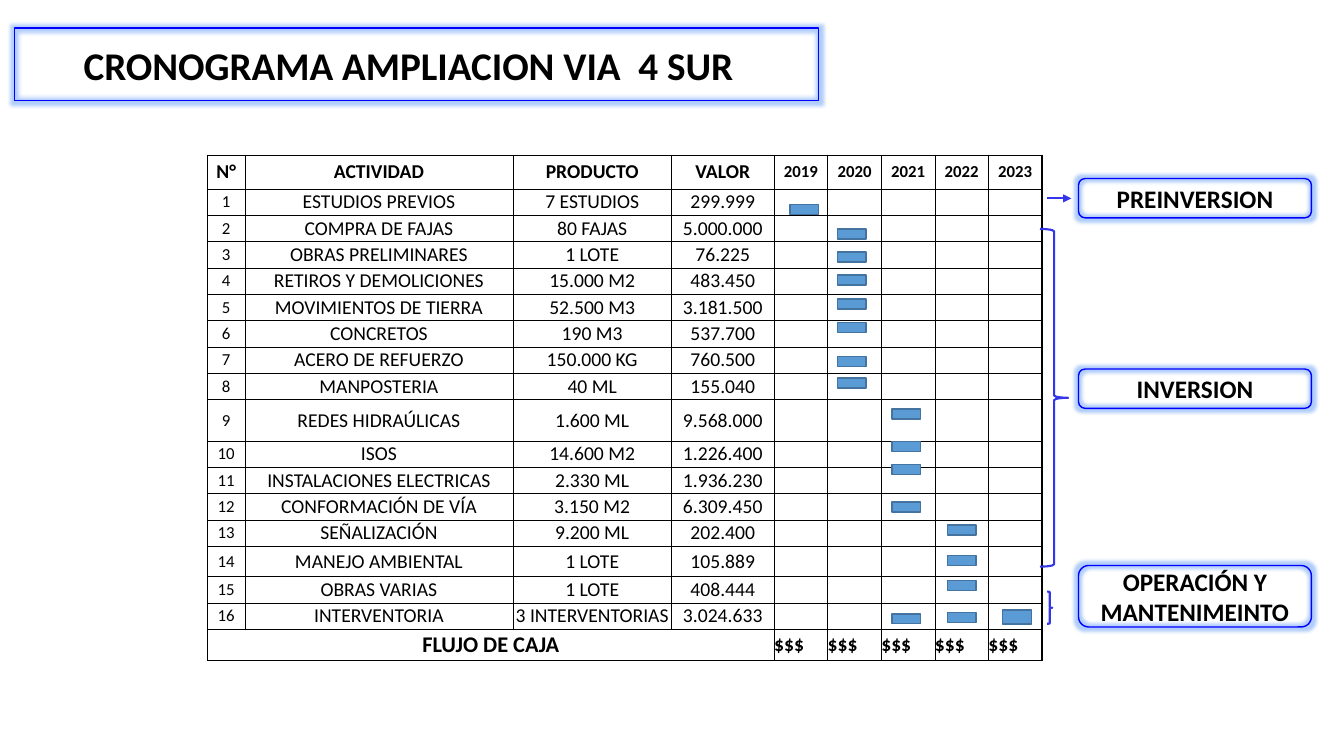
from lxml import etree
from pptx import Presentation
from pptx.dml.color import RGBColor
from pptx.enum.shapes import MSO_CONNECTOR, MSO_SHAPE
from pptx.enum.text import MSO_ANCHOR, MSO_AUTO_SIZE, PP_ALIGN
from pptx.oxml.ns import qn
from pptx.util import Cm, Pt

RECTANGLE = MSO_SHAPE.RECTANGLE
ROUNDED = MSO_SHAPE.FLOWCHART_ALTERNATE_PROCESS
BRACE = MSO_SHAPE.RIGHT_BRACE
STRAIGHT = MSO_CONNECTOR.STRAIGHT
MIDDLE = MSO_ANCHOR.MIDDLE
NO_AUTOFIT = MSO_AUTO_SIZE.NONE
LEFT, CENTER = PP_ALIGN.LEFT, PP_ALIGN.CENTER

FONT = "Calibri"
COLORS = {
    "text": "000000",
    "bar": "5B9BD5",
    "bar_line": "43739E",
    "box_line": "0000FF",
    "glow": "3B82F6",
    "bracket": "3437E9",
}

HEADERS = ["N°", "ACTIVIDAD", "PRODUCTO", "VALOR"]
YEARS = ["2019", "2020", "2021", "2022", "2023"]
ACTIVITIES = [
    ("ESTUDIOS PREVIOS", "7 ESTUDIOS", "299.999"),
    ("COMPRA DE FAJAS", "80 FAJAS", "5.000.000"),
    ("OBRAS PRELIMINARES", "1 LOTE", "76.225"),
    ("RETIROS Y DEMOLICIONES", "15.000 M2", "483.450"),
    ("MOVIMIENTOS DE TIERRA", "52.500 M3", "3.181.500"),
    ("CONCRETOS", "190 M3", "537.700"),
    ("ACERO DE REFUERZO", "150.000 KG", "760.500"),
    ("MANPOSTERIA", "40 ML", "155.040"),
    ("REDES HIDRAÚLICAS", "1.600 ML", "9.568.000"),
    ("ISOS", "14.600 M2", "1.226.400"),
    ("INSTALACIONES ELECTRICAS", "2.330 ML", "1.936.230"),
    ("CONFORMACIÓN DE VÍA", "3.150 M2", "6.309.450"),
    ("SEÑALIZACIÓN", "9.200 ML", "202.400"),
    ("MANEJO AMBIENTAL", "1 LOTE", "105.889"),
    ("OBRAS VARIAS", "1 LOTE", "408.444"),
    ("INTERVENTORIA", "3 INTERVENTORIAS", "3.024.633"),
]
COLUMN_WIDTHS = [0.94, 6.76, 3.99, 2.59] + [1.35] * len(YEARS)
TABLE_HEIGHT = 12.75
SPECIAL_ROW_HEIGHTS = {0: 0.85, 9: 1.04, 14: 0.76, 17: 0.79}

BARS = [
    (19.91, 0.25, [5.16]),
    (21.11, 0.25, [5.77, 6.35, 6.93, 7.54, 8.13, 8.99, 9.53]),
    (22.48, 0.25, [10.31, 11.13, 11.71, 12.65, 15.47]),
    (23.88, 0.25, [13.23, 14.0, 14.63, 15.44]),
    (25.27, 0.36, [15.37]),
]
PHASES = [
    ("PREINVERSION", 4.5, 0.99),
    ("INVERSION", 9.3, 0.99),
    ("OPERACIÓN Y MANTENIMEINTO", 14.25, 1.55),
]
BRACES = [(26.21, 5.77, 0.71, 8.51), (26.39, 14.91, 0.13, 0.81)]


def color(name):
    return RGBColor.from_string(COLORS[name])


def write_text(frame, text, size=14, bold=False, align=CENTER):
    frame.word_wrap = True
    paragraph = frame.paragraphs[0]
    paragraph.alignment = align
    run = paragraph.add_run()
    run.text = text
    run.font.name = FONT
    run.font.size = Pt(size)
    run.font.bold = bold
    run.font.color.rgb = color("text")


def set_line(shape, name, width=1):
    shape.line.color.rgb = color(name)
    shape.line.width = Pt(width)


def add_glow(shape):
    shape.shadow.inherit = False
    effects = shape.element.spPr.find(qn("a:effectLst"))
    glow = etree.SubElement(effects, qn("a:glow"), rad="63500")
    tint = etree.SubElement(glow, qn("a:srgbClr"), val=COLORS["glow"])
    etree.SubElement(tint, qn("a:alpha"), val="40000")


def format_box(shape, text, size):
    shape.fill.background()
    set_line(shape, "box_line")
    add_glow(shape)
    shape.text_frame.vertical_anchor = MIDDLE
    write_text(shape.text_frame, text, size=size, bold=True)


def add_shape(slide, kind, left, top, width, height):
    shape = slide.shapes.add_shape(kind, Cm(left), Cm(top), Cm(width), Cm(height))
    shape.shadow.inherit = False
    return shape


def add_title(slide):
    title = slide.shapes.title
    title.left, title.top, title.width, title.height = Cm(0.36), Cm(0.71), Cm(20.27), Cm(1.83)
    geometry = etree.SubElement(title.element.spPr, qn("a:prstGeom"), prst="flowChartAlternateProcess")
    etree.SubElement(geometry, qn("a:avLst"))
    title.text_frame.auto_size = NO_AUTOFIT
    title.text_frame.margin_right = Cm(0.66)
    format_box(title, "CRONOGRAMA AMPLIACION VIA  4 SUR", 28)


def set_borders(cell, widths):
    properties = cell._tc.get_or_add_tcPr()
    for side, width in zip("LRTB", widths):
        line = etree.SubElement(properties, qn(f"a:ln{side}"), w=str(Pt(width)))
        fill = etree.SubElement(line, qn("a:solidFill"))
        etree.SubElement(fill, qn("a:srgbClr"), val=COLORS["text"])


def fill_cell(cell, text, **text_format):
    cell.margin_left = cell.margin_right = cell.margin_top = cell.margin_bottom = 0
    cell.vertical_anchor = MIDDLE
    cell.fill.background()
    if text:
        write_text(cell.text_frame, text, **text_format)
    else:
        etree.SubElement(cell.text_frame.paragraphs[0]._p, qn("a:endParaRPr"), sz="1200")


def cell_format(row, column, last_row):
    is_year = column >= len(HEADERS)
    if row == 0:
        return {"size": 12 if is_year else 14, "bold": True}
    if row == last_row:
        return {"size": 14, "bold": True, "align": LEFT} if is_year else {"size": 16, "bold": True}
    return {"size": 12 if column == 0 else 14}


def add_schedule(slide):
    blanks = [""] * len(YEARS)
    rows = [HEADERS + YEARS]
    rows += [[str(number), *activity, *blanks] for number, activity in enumerate(ACTIVITIES, 1)]
    rows.append(["FLUJO DE CAJA", "", "", ""] + ["$$$"] * len(YEARS))
    last_row, last_column = len(rows) - 1, len(COLUMN_WIDTHS) - 1
    table = slide.shapes.add_table(
        len(rows), len(COLUMN_WIDTHS), Cm(5.23), Cm(3.91), Cm(sum(COLUMN_WIDTHS)), Cm(TABLE_HEIGHT)
    ).table
    table.first_row = table.horz_banding = False
    for column, width in zip(table.columns, COLUMN_WIDTHS):
        column.width = Cm(width)
    regular_height = (TABLE_HEIGHT - sum(SPECIAL_ROW_HEIGHTS.values())) / (len(rows) - len(SPECIAL_ROW_HEIGHTS))
    for row, texts in enumerate(rows):
        table.rows[row].height = Cm(SPECIAL_ROW_HEIGHTS.get(row, regular_height))
        for column, text in enumerate(texts):
            cell = table.cell(row, column)
            outer = (column == 0, column == last_column, row == 0, row == last_row)
            set_borders(cell, [1 if edge else 0.5 for edge in outer])
            fill_cell(cell, text, **cell_format(row, column, last_row))
    table.cell(last_row, 0).merge(table.cell(last_row, len(HEADERS) - 1))


def add_bar(slide, left, top, height):
    bar = add_shape(slide, RECTANGLE, left, top, 0.72, height)
    bar.fill.solid()
    bar.fill.fore_color.rgb = color("bar")
    set_line(bar, "bar_line")


def add_brace(slide, left, top, width, height):
    brace = add_shape(slide, BRACE, left, top, width, height)
    brace.fill.background()
    set_line(brace, "bracket", 1.5)


def add_arrow(slide, start, end, top):
    arrow = slide.shapes.add_connector(STRAIGHT, Cm(start), Cm(top), Cm(end), Cm(top))
    set_line(arrow, "bracket", 1.5)
    etree.SubElement(arrow.line._get_or_add_ln(), qn("a:tailEnd"), type="triangle")
    etree.SubElement(arrow.element.spPr, qn("a:effectLst"))


def main():
    presentation = Presentation()
    presentation.slide_width, presentation.slide_height = Cm(33.87), Cm(19.05)
    slide = presentation.slides.add_slide(presentation.slide_layouts[5])
    add_title(slide)
    add_schedule(slide)
    for left, height, tops in BARS:
        for top in tops:
            add_bar(slide, left, top, height)
    for text, top, height in PHASES:
        format_box(add_shape(slide, ROUNDED, 27.18, top, 5.87, height), text, 18)
    for brace in BRACES:
        add_brace(slide, *brace)
    add_arrow(slide, 26.39, 27.0, 5.0)
    presentation.save("out.pptx")


if __name__ == "__main__":
    main()
